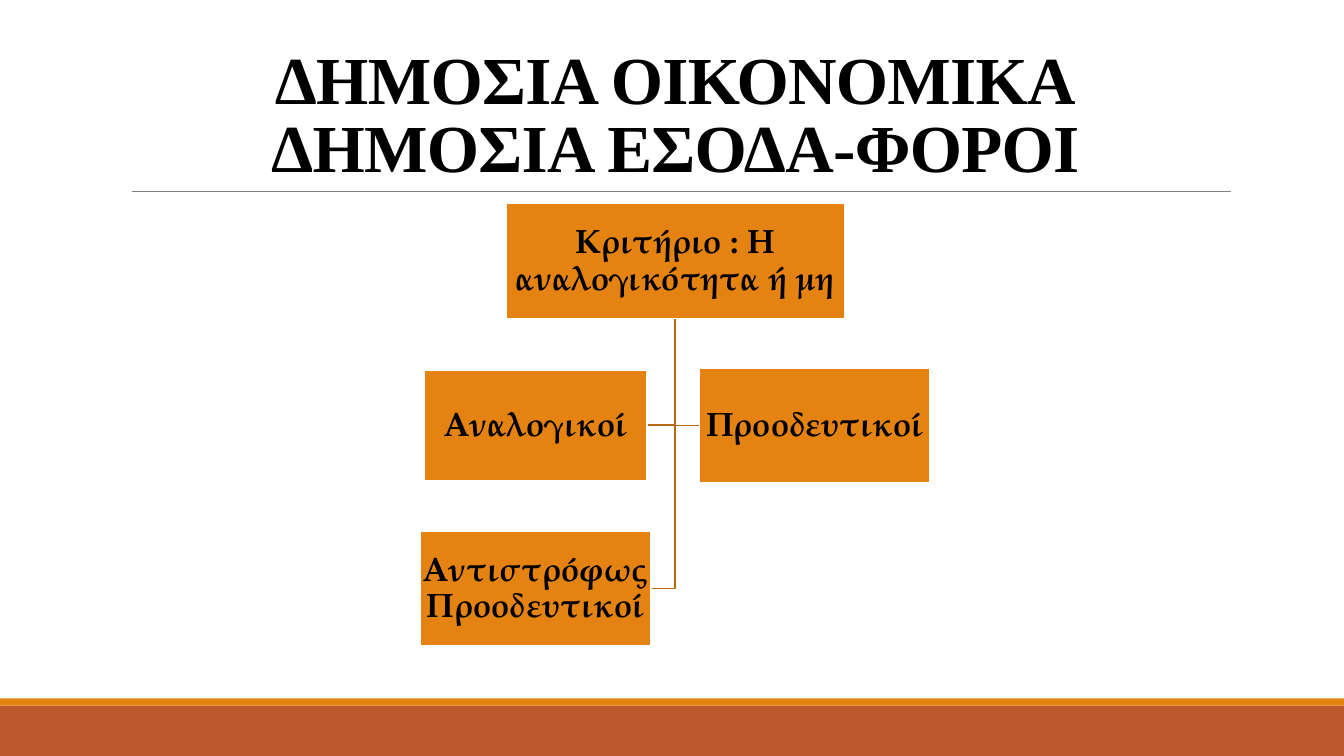
from lxml import etree
from pptx import Presentation
from pptx import util as u
from pptx.dml.color import RGBColor
from pptx.enum import shapes, text
from pptx.oxml.ns import qn

BLACK = RGBColor(0x00, 0x00, 0x00)
WHITE = RGBColor(0xFF, 0xFF, 0xFF)
ORANGE = RGBColor(0xE4, 0x83, 0x12)
RUST = RGBColor(0xBD, 0x58, 0x2C)
BROWN = RGBColor(0xB7, 0x69, 0x0E)
GREY = RGBColor(0x80, 0x80, 0x80)

WIDTH, HEIGHT = 960, 540
TRUNK_X, TRUNK_TOP = 482.4, 228.2
ROOT = ("Κριτήριο : Η αναλογικότητα ή μη", 361.4, 145.4, 241.9, 82.1)
BRANCHES = [
    ("Αντιστρόφως Προοδευτικοί", 300.2, 379.4, 164.9, 82.1),
    ("Προοδευτικοί", 499.7, 262.8, 164.9, 82.1),
    ("Αναλογικοί", 303.1, 264.2, 159.1, 79.2),
]


class ChartSlide:
    """Holds the slide and the style of its elements."""

    title_font = "Times New Roman"
    box_font = "TeX Gyre Pagella"
    line_width = 1.25

    def __init__(self, slide):
        self.shapes = slide.shapes

    def fill_text(self, frame, words, font, size, spacing, margin):
        frame.word_wrap = True
        frame.margin_left = frame.margin_right = u.Pt(margin[0])
        frame.margin_top = frame.margin_bottom = u.Pt(margin[1])
        frame.text = words
        para = frame.paragraphs[0]
        para.alignment = text.PP_ALIGN.CENTER
        para.line_spacing = spacing
        for span in para.runs:
            span.font.name = font
            span.font.size = u.Pt(size)
            span.font.bold = True
            span.font.color.rgb = BLACK
        return para

    def rectangle(self, left, top, width, height, fill, line=None):
        box = self.shapes.add_shape(
            shapes.MSO_SHAPE.RECTANGLE,
            u.Pt(left), u.Pt(top), u.Pt(width), u.Pt(height))
        box.shadow.inherit = False
        box.fill.solid()
        box.fill.fore_color.rgb = fill
        if line is None:
            box.line.fill.background()
        else:
            box.line.color.rgb = line
            box.line.width = u.Pt(self.line_width)
        return box

    def node(self, words, left, top, width, height):
        box = self.rectangle(left, top, width, height, ORANGE, WHITE)
        box.text_frame.vertical_anchor = text.MSO_ANCHOR.MIDDLE
        self.fill_text(box.text_frame, words, self.box_font, 24, 0.9, (1.2, 1.2))

    def title(self, words, left, top, width, height):
        box = self.shapes.add_textbox(
            u.Pt(left), u.Pt(top), u.Pt(width), u.Pt(height))
        box.text_frame.vertical_anchor = text.MSO_ANCHOR.BOTTOM
        para = self.fill_text(
            box.text_frame, words, self.title_font, 48, 0.85, (7.2, 3.6))
        for span in para.runs:
            span.font._element.set("spc", "-50")

    def rule(self, left, right, y):
        line = self.shapes.add_connector(
            shapes.MSO_CONNECTOR.STRAIGHT,
            u.Pt(left), u.Pt(y), u.Pt(right), u.Pt(y))
        line.line.color.rgb = GREY
        line.line.width = u.Pt(0.5)
        etree.SubElement(line._element.spPr, qn("a:effectLst"))

    def branch(self, left, top, width, height):
        """Draw an elbow from the trunk to the near side of a box."""
        side = left if left > TRUNK_X else left + width
        middle = top + height / 2
        builder = self.shapes.build_freeform(u.Pt(TRUNK_X), u.Pt(TRUNK_TOP))
        builder.add_line_segments(
            [(u.Pt(TRUNK_X), u.Pt(middle)), (u.Pt(side), u.Pt(middle))], close=False)
        elbow = builder.convert_to_shape()
        elbow.shadow.inherit = False
        elbow.fill.background()
        elbow.line.color.rgb = BROWN
        elbow.line.width = u.Pt(self.line_width)


def main():
    deck = Presentation()
    deck.slide_width, deck.slide_height = u.Pt(WIDTH), u.Pt(HEIGHT)
    page = ChartSlide(deck.slides.add_slide(deck.slide_layouts[6]))

    page.rectangle(0, 504, WIDTH, 36, RUST)
    page.rectangle(0, 498.8, WIDTH, 5.2, ORANGE)
    page.rule(94.3, 879, 136.8)
    page.title("ΔΗΜΟΣΙΑ ΟΙΚΟΝΟΜΙΚΑ\vΔΗΜΟΣΙΑ ΕΣΟΔΑ-ΦΟΡΟΙ", 86.4, 22.3, 792, 114.5)

    for _, *place in BRANCHES:
        page.branch(*place)
    for words, *place in [ROOT, *BRANCHES]:
        page.node(words, *place)

    deck.save("out.pptx")


if __name__ == "__main__":
    main()
